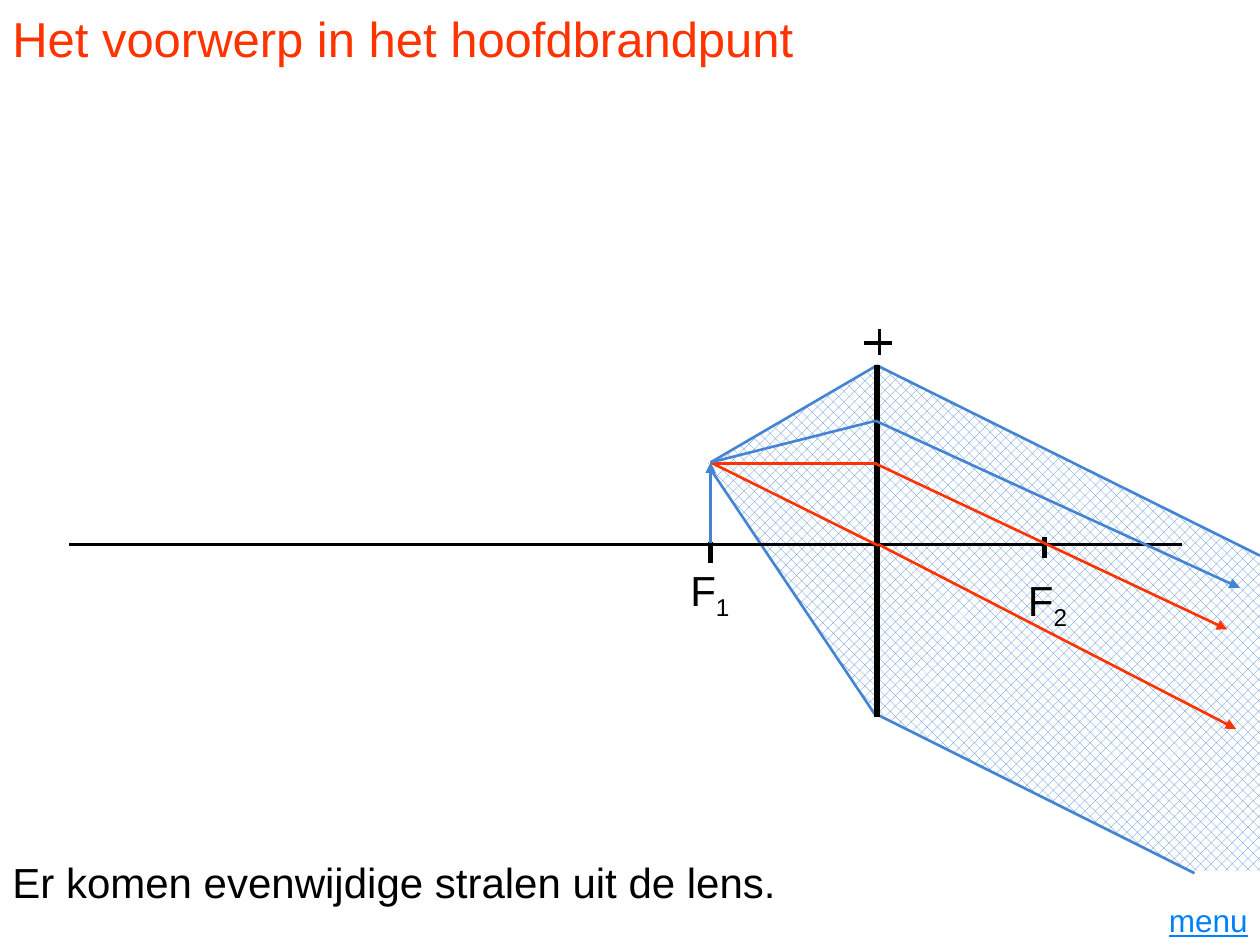
from typing import NamedTuple

from pptx import Presentation
from pptx import util as u
from pptx.dml.color import RGBColor
from pptx.enum import dml, shapes, text
from pptx.oxml.ns import qn
from lxml import etree

BLUE = RGBColor(0x45, 0x84, 0xD3)
RED = RGBColor(0xFF, 0x33, 0x00)
BLACK = RGBColor(0, 0, 0)
WHITE = RGBColor(0xFF, 0xFF, 0xFF)
LINK = RGBColor(0x00, 0x80, 0xFF)

COLS, ROWS = 100, 75
CELL = u.Inches(0.1)

# Optical landmarks, in grid columns and rows
LENS, LENS_TOP, LENS_BOTTOM = 69.6, 29, 56.9
AXIS, F1, F2 = 43.2, 56.4, 82.9
TIP = (F1, 36.7)


class Line(NamedTuple):
    start: tuple[float, float]
    end: tuple[float, float]
    color: RGBColor = BLUE
    width: float = 1.5
    arrow: bool = False


class Label(NamedTuple):
    box: tuple[float, float, float, float]
    words: str
    size: int
    color: RGBColor = BLACK
    subscript: str = ""
    align: text.PP_ALIGN = text.PP_ALIGN.LEFT
    anchor: text.MSO_ANCHOR = text.MSO_ANCHOR.TOP
    underline: bool = False


BEAMS = [
    [(69.7, LENS_TOP), (69.8, 56.6), (94.4, 69.1), (COLS, 69.1), (COLS, 44.2)],
    [(69.4, 56.6), (69.4, 29.3), (56.2, 36.8)],
]

TITLE = Label((0, 0.2, COLS, 5.7), "Het voorwerp in het hoofdbrandpunt", 28, RED,
              anchor=text.MSO_ANCHOR.MIDDLE)

EDGE_RAYS = [
    Line(TIP, (LENS, LENS_TOP)),
    Line((LENS, LENS_TOP), (COLS, 44.1)),
    Line((LENS, 56.7), (94.8, 69.3)),
    Line((56.5, 37.4), (69.5, 56.8)),
]

LENS_AND_AXIS = [
    Line((F1, 43), (F1, 44.7), BLACK, 3),
    Line((F2, 42.6), (F2, 44.3), BLACK, 3),
    Line((LENS, LENS_TOP), (LENS, LENS_BOTTOM), BLACK, 3),
    Line((68.6, 27.2), (70.8, 27.2), BLACK, 2.25),
    Line((69.8, 26.1), (69.8, 28.2), BLACK, 2.25),
    Line((F1, AXIS), TIP, BLUE, 2, arrow=True),
    Line((5.5, AXIS), (93.8, AXIS), BLACK),
]

INNER_RAYS = [
    Line(TIP, (69.7, 43.3), RED),
    Line((69.5, 36.8), (97.4, 49.95), RED, arrow=True),
    Line((69.7, AXIS), (98.1, 57.85), RED, arrow=True),
    Line((69.5, 33.4), (98.4, 46.65), arrow=True),
    Line((56.5, 36.8), (LENS, 36.8), RED),
    Line(TIP, (69.5, 33.4)),
]

LABELS = [
    Label((53.8, 44.5, 5.8, 5.1), "F", 24, subscript="1", anchor=text.MSO_ANCHOR.MIDDLE),
    Label((80.6, 45.3, 5.8, 5.1), "F", 24, subscript="2", anchor=text.MSO_ANCHOR.MIDDLE),
    Label((0, 67.5, 70.8, 5), "Er komen evenwijdige stralen uit de lens.", 24),
    Label((89.8, 71, 10.2, 4), "menu", 18, LINK, align=text.PP_ALIGN.RIGHT, underline=True),
]


def grid(*cells: float) -> list[int]:
    """Turn columns or rows into slide lengths."""
    return [round(c * CELL) for c in cells]


def draw_beam(s, points: list[tuple[float, float]]) -> None:
    first, *rest = [grid(*pt) for pt in points]
    builder = s.shapes.build_freeform(*first)
    builder.add_line_segments(rest, close=True)
    sp = builder.convert_to_shape()
    sp.shadow.inherit = False
    sp.line.fill.background()
    sp.fill.patterned()
    sp.fill.pattern = dml.MSO_PATTERN.from_xml("pct40")
    sp.fill.fore_color.rgb = BLUE
    sp.fill.back_color.rgb = WHITE


def draw_line(s, line: Line) -> None:
    sp = s.shapes.add_connector(shapes.MSO_CONNECTOR.STRAIGHT,
                                *grid(*line.start, *line.end))
    sp.line.color.rgb = line.color
    sp.line.width = u.Pt(line.width)
    if line.arrow:
        etree.SubElement(sp.line._get_or_add_ln(), qn("a:tailEnd"), type="triangle")
    etree.SubElement(sp._element.spPr, qn("a:effectLst"))


def draw_label(s, label: Label) -> None:
    tf = s.shapes.add_textbox(*grid(*label.box)).text_frame
    tf.word_wrap = True
    tf.vertical_anchor = label.anchor
    p = tf.paragraphs[0]
    p.alignment = label.align
    formats = {"name": "Arial", "size": u.Pt(label.size), "underline": label.underline}
    for words in filter(None, (label.words, label.subscript)):
        r = p.add_run()
        r.text = words
        for name, value in formats.items():
            setattr(r.font, name, value)
        r.font.color.rgb = label.color
    if label.subscript:
        r._r.get_or_add_rPr().set("baseline", "-25000")


def main() -> None:
    prs = Presentation()
    prs.slide_width, prs.slide_height = grid(COLS, ROWS)
    s = prs.slides.add_slide(prs.slide_layouts[6])
    for beam in BEAMS:
        draw_beam(s, beam)
    draw_label(s, TITLE)
    for line in EDGE_RAYS + LENS_AND_AXIS + INNER_RAYS:
        draw_line(s, line)
    for label in LABELS:
        draw_label(s, label)
    prs.save("out.pptx")


if __name__ == "__main__":
    main()
